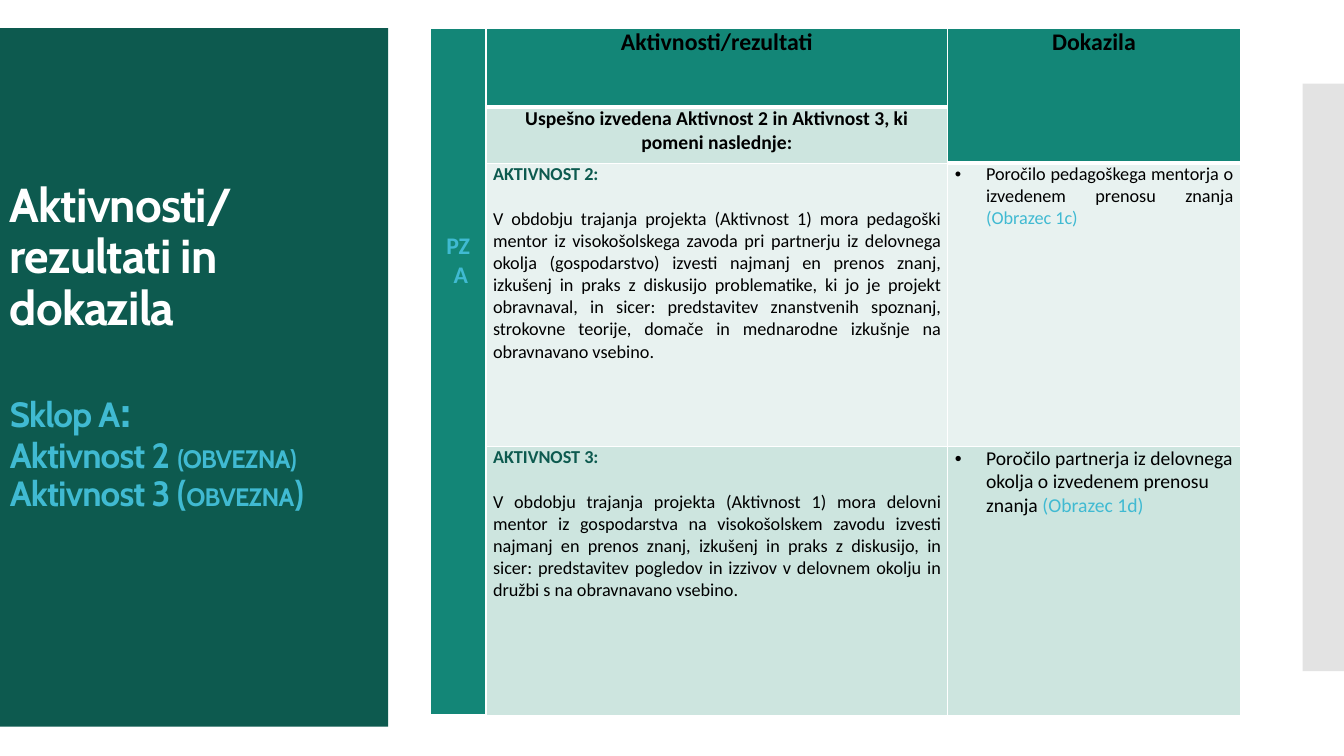
from lxml.etree import SubElement
from pptx import Presentation
from pptx.dml.color import RGBColor
from pptx.enum.shapes import MSO_SHAPE
from pptx.enum.text import MSO_ANCHOR, PP_ALIGN
from pptx.oxml.ns import qn
from pptx.util import Inches, Pt

WHITE, BLACK, GRAY = "FFFFFF", "000000", "C8C8C8"
DARK, TEAL, SKY = "0D5A4F", "138677", "40BAD2"
MINT, PALE = "CDE5DF", "E8F2F0"
CENTER, JUSTIFY, LEFT = PP_ALIGN.CENTER, PP_ALIGN.JUSTIFY, PP_ALIGN.LEFT


def color(value):
    return RGBColor.from_string(value)


class SlideBuilder:
    body_font = "Calibri"
    title_font = "Cabin"

    def __init__(self, deck):
        self.page = deck.slides.add_slide(deck.slide_layouts[6])

    def rectangle(self, left, top, width, height, fill, opacity=100):
        box = self.page.shapes.add_shape(
            MSO_SHAPE.RECTANGLE, Inches(left), Inches(top), Inches(width), Inches(height))
        box.shadow.inherit = False
        box.line.fill.background()
        box.fill.solid()
        box.fill.fore_color.rgb = color(fill)
        if opacity < 100:
            tint = box.fill._xPr.find(qn("a:solidFill"))[0]
            SubElement(tint, qn("a:alpha"), val=str(opacity * 1000))
        return box

    def paragraph(self, frame, index, spans, formats, font, tracking=0):
        """Fill one paragraph; spans are (text, size, colour, bold)."""
        para = frame.paragraphs[0] if index == 0 else frame.add_paragraph()
        for name, value in formats.items():
            setattr(para, name, value)
        for text, size, tone, bold in spans:
            span = para.add_run()
            span.text = text
            looks = {"size": Pt(size), "bold": bold, "name": font}
            for name, value in looks.items():
                setattr(span.font, name, value)
            span.font.color.rgb = color(tone)
            if tracking:
                span._r.get_or_add_rPr().set("spc", str(tracking))
        return para

    def bullet(self, para, indent):
        props = para._p.get_or_add_pPr()
        props.set("marL", str(Inches(indent)))
        props.set("indent", str(-Inches(indent)))
        SubElement(props, qn("a:buFont"), typeface="Arial")
        SubElement(props, qn("a:buChar"), char="•")

    def title(self, box, paragraphs, top_inset):
        frame = box.text_frame
        layout = {"word_wrap": True, "vertical_anchor": MSO_ANCHOR.TOP,
                  "margin_top": Inches(top_inset)}
        for name, value in layout.items():
            setattr(frame, name, value)
        for index, (spans, gap) in enumerate(paragraphs):
            formats = {"alignment": LEFT, "line_spacing": 0.9, "space_before": Pt(gap)}
            self.paragraph(frame, index, spans, formats, self.title_font, -60)

    def table(self, left, top, columns, rows):
        frame = self.page.shapes.add_table(
            len(rows), len(columns), Inches(left), Inches(top),
            Inches(sum(columns)), Inches(sum(rows)))
        grid = frame.table
        grid.first_row = grid.horz_banding = False
        for column, width in zip(grid.columns, columns):
            column.width = Inches(width)
        for row, height in zip(grid.rows, rows):
            row.height = Inches(height)
        return grid

    def borders(self, cell, widths):
        props = cell._tc.get_or_add_tcPr()
        for side, width in widths.items():
            line = SubElement(props, qn("a:ln" + side), w=str(Pt(width)))
            SubElement(SubElement(line, qn("a:solidFill")), qn("a:srgbClr"), val=WHITE)

    def cell(self, cell, fill, paragraphs, alignment, top_inset=0, gap=0, indent=0):
        cell.fill.solid()
        cell.fill.fore_color.rgb = color(fill)
        margins = {"margin_left": 0.07, "margin_right": 0.07,
                   "margin_top": top_inset, "margin_bottom": 0}
        for name, value in margins.items():
            setattr(cell, name, Inches(value))
        for index, spans in enumerate(paragraphs):
            formats = {"alignment": alignment, "space_before": Pt(gap if index else 0)}
            para = self.paragraph(cell.text_frame, index, spans, formats, self.body_font)
            if indent:
                self.bullet(para, indent)


def main():
    deck = Presentation()
    deck.slide_width, deck.slide_height = Inches(13.33), Inches(7.5)
    builder = SlideBuilder(deck)

    # Side panels and title
    builder.rectangle(12.92, 0.83, 0.41, 5.83, GRAY, opacity=50)
    panel = builder.rectangle(0, 0.28, 3.85, 6.93, DARK)
    builder.title(panel, [
        ([("Aktivnosti/ rezultati in dokazila", 34, WHITE, True)], 0),
        ([("Sklop A", 25, SKY, True), (":", 34, SKY, True)], 36.5),
        ([("Aktivnost 2 ", 25, SKY, True), ("(OBVEZNA)", 18, SKY, True)], 0),
        ([("Aktivnost 3 (", 25, SKY, True), ("OBVEZNA", 18, SKY, True),
          (")", 25, SKY, True)], 0),
    ], top_inset=1.52)

    # Table grid: white rules, heavier under the header cells
    grid = builder.table(4.27, 0.28, [0.55, 4.58, 2.9], [0.78, 0.56, 2.81, 2.67])
    heavy = {(0, 0), (0, 1), (0, 2), (1, 2), (3, 0)}
    for row in range(4):
        for column in range(3):
            widths = {"L": 1, "R": 1}
            if row == 0:
                widths["T"] = 1
            widths["B"] = 3 if (row, column) in heavy else 1
            builder.borders(grid.cell(row, column), widths)
    grid.cell(0, 0).merge(grid.cell(3, 0))
    grid.cell(0, 2).merge(grid.cell(1, 2))

    # Header cells
    builder.cell(grid.cell(0, 0), TEAL,
                 [[("PZ", 17, SKY, True)], [(" A", 17, SKY, True)]], CENTER, top_inset=2.02)
    for column, heading in enumerate(["Aktivnosti/rezultati", "Dokazila"], 1):
        builder.cell(grid.cell(0, column), TEAL, [[(heading, 17, BLACK, True)]], CENTER)
    builder.cell(grid.cell(1, 1), MINT, [[(
        "Uspešno izvedena Aktivnost 2 in Aktivnost 3, ki pomeni naslednje:",
        14, BLACK, True)]], CENTER)

    # Activities and their evidence
    activities = [
        ("AKTIVNOST 2: ",
         "V obdobju trajanja projekta (Aktivnost 1) mora pedagoški mentor iz visokošolskega "
         "zavoda pri partnerju iz delovnega okolja (gospodarstvo) izvesti najmanj en prenos "
         "znanj, izkušenj in praks z diskusijo problematike, ki jo je projekt obravnaval, in "
         "sicer: predstavitev znanstvenih spoznanj, strokovne teorije, domače in mednarodne "
         "izkušnje na obravnavano vsebino.",
         "Poročilo pedagoškega mentorja o izvedenem prenosu znanja ", "(Obrazec 1c)",
         PALE, 13, JUSTIFY),
        ("AKTIVNOST 3: ",
         "V obdobju trajanja projekta (Aktivnost 1) mora delovni mentor iz gospodarstva na "
         "visokošolskem zavodu izvesti najmanj en prenos znanj, izkušenj in praks z diskusijo, "
         "in sicer: predstavitev pogledov in izzivov v delovnem okolju in družbi s na "
         "obravnavano vsebino.",
         "Poročilo partnerja iz delovnega okolja o izvedenem prenosu znanja ", "(Obrazec 1d)",
         MINT, 14, LEFT),
    ]
    for row, (heading, body, report, form, fill, size, alignment) in enumerate(activities, 2):
        builder.cell(grid.cell(row, 1), fill, [
            [(heading, 13, DARK, True)], [(body, 13, BLACK, False)]], JUSTIFY, gap=15.9)
        builder.cell(grid.cell(row, 2), fill, [
            [(report, size, BLACK, False), (form, size, SKY, False)]], alignment, indent=0.31)

    deck.save("out.pptx")


if __name__ == "__main__":
    main()
